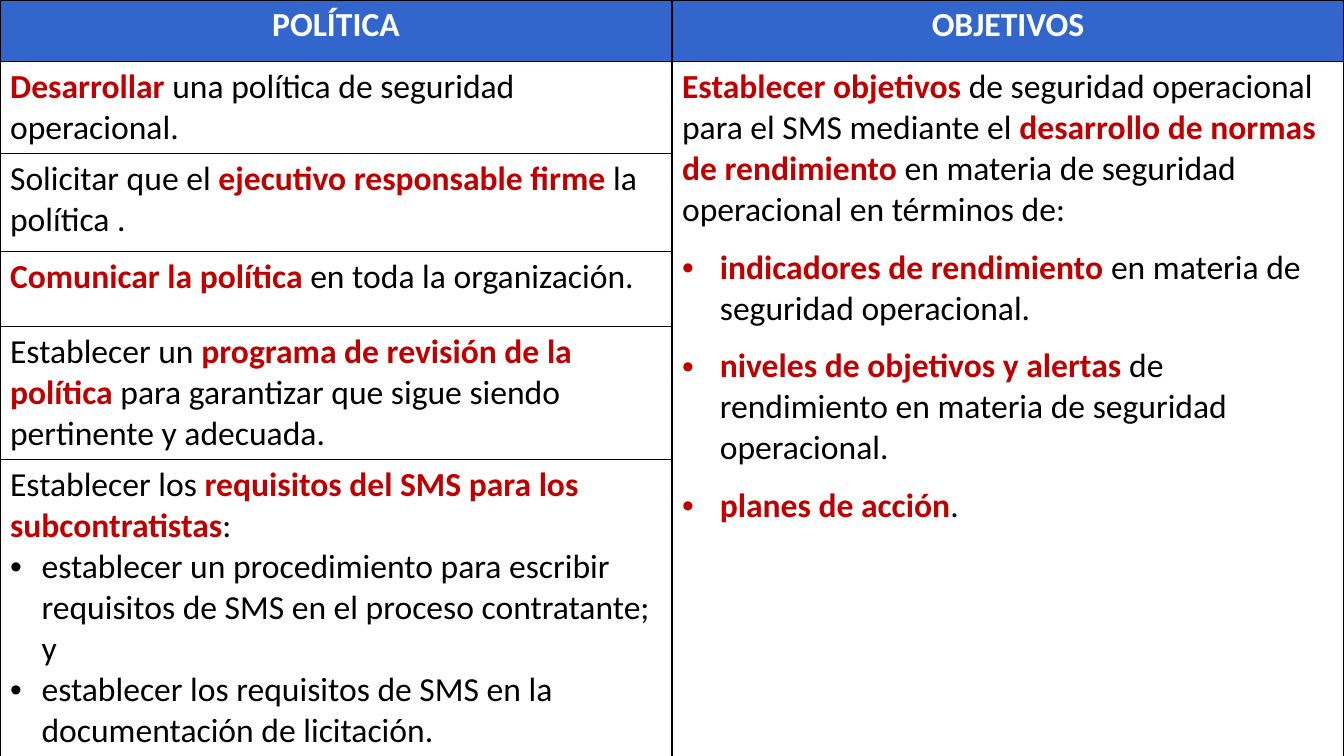
from dataclasses import dataclass

from lxml.etree import SubElement
from pptx import Presentation
from pptx.dml.color import RGBColor as RGB
from pptx.enum.text import PP_ALIGN as Align
from pptx.oxml.ns import qn
from pptx.util import Pt


@dataclass(frozen=True)
class Theme:
    font: str = "Calibri"
    size: float = 24
    header: str = "3366CC"
    header_text: str = "FFFFFF"
    text: str = "000000"
    emphasis: str = "C00000"
    border: str = "000000"
    border_width: float = 1
    gap: float = 6


THEME = Theme()
WIDTH, HEIGHT = 960, 540
ROW_HEIGHTS = [43.8, 65.6, 69.8, 53.8, 95, 212]
HEADERS = ["POLÍTICA", "OBJETIVOS"]

# Emphasised words stand between asterisks
POLICIES = [
    "*Desarrollar* una política de seguridad operacional.",
    "Solicitar que el *ejecutivo responsable firme *la política .",
    "*Comunicar la política *en toda la organización.",
    "Establecer un *programa de revisión de la política* para garantizar "
    "que sigue siendo pertinente y adecuada.",
]
SUBCONTRACTORS = "Establecer los *requisitos del SMS para los subcontratistas*:"
SUBCONTRACTOR_STEPS = [
    "establecer un procedimiento para escribir requisitos de SMS "
    "en el proceso contratante; y",
    "establecer los requisitos de SMS en la documentación de licitación.",
]
GOALS = (
    "*Establecer objetivos *de seguridad operacional para el SMS mediante el "
    "*desarrollo de normas de rendimiento *en materia de seguridad "
    "operacional en términos de:"
)
GOAL_TERMS = [
    "*indicadores de rendimiento *en materia de seguridad operacional.",
    "*niveles de objetivos y alertas *de rendimiento en materia de "
    "seguridad operacional.",
    "*planes de acción*.",
]


def add_run(paragraph, text, color, bold):
    run = paragraph.add_run()
    run.text = text
    run.font.name = THEME.font
    run.font.size = Pt(THEME.size)
    run.font.bold = bold
    run.font.color.rgb = RGB.from_string(color)


def add_bullet(paragraph, indent):
    props = paragraph._p.get_or_add_pPr()
    props.set("marL", str(Pt(indent)))
    props.set("indent", str(-Pt(indent)))
    SubElement(props, qn("a:buFont"), typeface="Arial")
    SubElement(props, qn("a:buChar"), char="•")


def write_cell(cell, intro, items=(), indent=0, gap=0):
    """Fill a body cell with an opening paragraph and its bulleted items."""
    for index, text in enumerate([intro, *items]):
        if index == 0:
            paragraph = cell.text_frame.paragraphs[0]
        else:
            paragraph = cell.text_frame.add_paragraph()
            add_bullet(paragraph, indent)
            paragraph.space_before = Pt(gap)
        paragraph.space_after = Pt(gap)
        for part, words in enumerate(text.split("*")):
            strong = part % 2 == 1
            if words:
                add_run(paragraph, words,
                        THEME.emphasis if strong else THEME.text, strong)


def write_header(cell, text):
    cell.fill.solid()
    cell.fill.fore_color.rgb = RGB.from_string(THEME.header)
    paragraph = cell.text_frame.paragraphs[0]
    paragraph.alignment = Align.CENTER
    add_run(paragraph, text, THEME.header_text, True)


def draw_borders(cell):
    props = cell._tc.get_or_add_tcPr()
    for side in ("lnL", "lnR", "lnT", "lnB"):
        line = SubElement(props, qn(f"a:{side}"), w=str(Pt(THEME.border_width)))
        fill = SubElement(line, qn("a:solidFill"))
        SubElement(fill, qn("a:srgbClr"), val=THEME.border)


def add_grid(slide):
    """Add the plain ruled table that covers the slide."""
    grid = slide.shapes.add_table(len(ROW_HEIGHTS), len(HEADERS), Pt(0), Pt(0),
                                  Pt(WIDTH), Pt(HEIGHT)).table
    grid.first_row = grid.horz_banding = False
    for row, height in zip(grid.rows, ROW_HEIGHTS):
        row.height = Pt(height)
    for cell in grid.iter_cells():
        draw_borders(cell)
        cell.fill.background()
    return grid


def main():
    deck = Presentation()
    deck.slide_width, deck.slide_height = Pt(WIDTH), Pt(HEIGHT)
    slide = deck.slides.add_slide(deck.slide_layouts[6])
    grid = add_grid(slide)

    # Header row
    for column, heading in enumerate(HEADERS):
        write_header(grid.cell(0, column), heading)

    # Policy column
    for row, policy in enumerate(POLICIES, start=1):
        write_cell(grid.cell(row, 0), policy, gap=THEME.gap)
    last_row = len(ROW_HEIGHTS) - 1
    write_cell(grid.cell(last_row, 0), SUBCONTRACTORS, SUBCONTRACTOR_STEPS,
               indent=22.5)

    # Objectives column, one tall cell
    objectives = grid.cell(1, 1)
    objectives.merge(grid.cell(last_row, 1))
    write_cell(objectives, GOALS, GOAL_TERMS, indent=27, gap=THEME.gap)

    deck.save("out.pptx")


if __name__ == "__main__":
    main()
